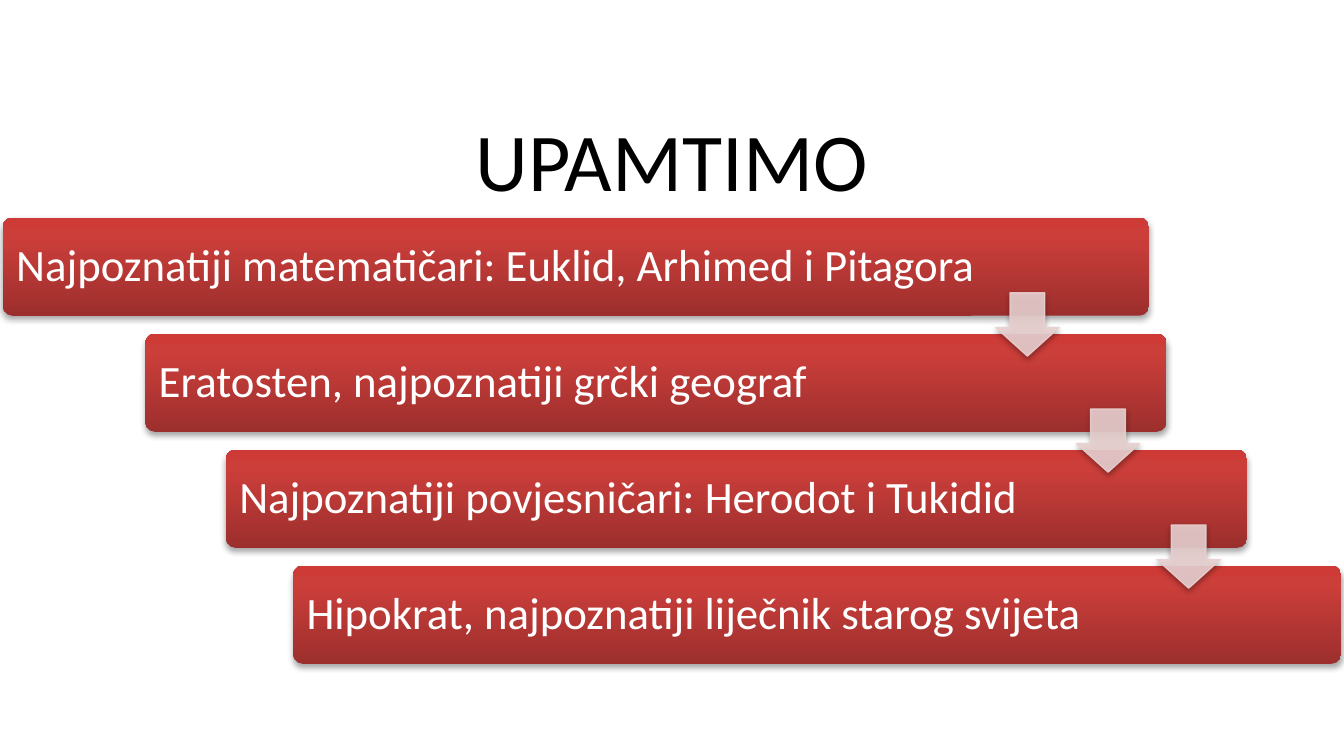
from lxml.etree import SubElement
from pptx import Presentation
from pptx.dml.color import RGBColor
from pptx.enum.shapes import MSO_SHAPE
from pptx.enum.text import MSO_ANCHOR, MSO_AUTO_SIZE, PP_ALIGN
from pptx.oxml import parse_xml
from pptx.oxml.ns import nsdecls, qn
from pptx.util import Inches, Pt

TITLE = "UPAMTIMO"
# text, left, width
STEPS = [
    ("Najpoznatiji matematičari: Euklid, Arhimed i Pitagora", 0.02, 8.53),
    ("Eratosten, najpoznatiji grčki geograf", 1.08, 7.6),
    ("Najpoznatiji povjesničari: Herodot i Tukidid", 1.68, 7.6),
    ("Hipokrat, najpoznatiji liječnik starog svijeta", 2.18, 7.8),
]
BLACK = RGBColor(0x00, 0x00, 0x00)
WHITE = RGBColor(0xFF, 0xFF, 0xFF)
PINK = RGBColor(0xE8, 0xD0, 0xD0)
RED_STOPS = [
    (0, RGBColor(0x9C, 0x2F, 0x2D)),
    (80, RGBColor(0xCB, 0x3E, 0x3A)),
    (100, RGBColor(0xCE, 0x3B, 0x37)),
]
FONT = "Calibri"
SLIDE_W = 10
SLIDE_H = SLIDE_W * 9 / 16
TOP, BAR_H = 1.62, 0.73
PITCH = (4.21 - TOP) / (len(STEPS) - 1)
ARROW_LEFT, ARROW_SHIFT, ARROW_DROP, ARROW_SIZE = 7.41, 0.6, 0.56, 0.47


def set_text(tf, text, size, color, align):
    tf.word_wrap = True
    tf.auto_size = MSO_AUTO_SIZE.NONE
    tf.vertical_anchor = MSO_ANCHOR.MIDDLE
    p = tf.paragraphs[0]
    p.text = text
    p.alignment = align
    p.line_spacing = 0.9
    p.font.name, p.font.size, p.font.color.rgb = FONT, Pt(size), color


def add_gradient(sp):
    """Fill the shape with the red stops, running from bottom to top."""
    stops = "".join(
        f'<a:gs pos="{pos * 1000}"><a:srgbClr val="{color}"/></a:gs>'
        for pos, color in RED_STOPS)
    sp._element.spPr.append(parse_xml(
        f'<a:gradFill {nsdecls("a")} rotWithShape="1"><a:gsLst>{stops}</a:gsLst>'
        '<a:lin ang="16200000" scaled="0"/></a:gradFill>'))


def add_shadow(sp):
    sp._element.spPr.append(parse_xml(
        f'<a:effectLst {nsdecls("a")}>'
        f'<a:outerShdw blurRad="{Pt(3.1)}" dist="{Pt(1.8)}" dir="5400000" rotWithShape="0">'
        '<a:srgbClr val="000000"><a:alpha val="35000"/></a:srgbClr>'
        '</a:outerShdw></a:effectLst>'))


def add_bar(shapes, i, text, left, width):
    sp = shapes.add_shape(MSO_SHAPE.ROUNDED_RECTANGLE, Inches(left),
                          Inches(TOP + i * PITCH), Inches(width), Inches(BAR_H))
    sp.adjustments[0] = 0.1
    add_gradient(sp)
    sp.line.fill.background()
    add_shadow(sp)
    tf = sp.text_frame
    tf.margin_left = tf.margin_right = Inches(0.08)
    tf.margin_top = tf.margin_bottom = Inches(0.1)
    set_text(tf, text, 24, WHITE, PP_ALIGN.LEFT)


def add_arrow(shapes, i):
    sp = shapes.add_shape(MSO_SHAPE.DOWN_ARROW, Inches(ARROW_LEFT + i * ARROW_SHIFT),
                          Inches(TOP + ARROW_DROP + i * PITCH),
                          Inches(ARROW_SIZE), Inches(ARROW_SIZE))
    sp.adjustments[0], sp.adjustments[1] = 0.55, 0.45
    sp.line.width = Pt(0.75)
    for fill in (sp.fill, sp.line.fill):
        fill.solid()
        fill.fore_color.rgb = PINK
    for color in sp._element.spPr.iter(qn("a:srgbClr")):
        SubElement(color, qn("a:alpha"), val="90000")
    add_shadow(sp)


prs = Presentation()
prs.slide_width, prs.slide_height = Inches(SLIDE_W), Inches(SLIDE_H)
s = prs.slides.add_slide(prs.slide_layouts[5])

title = s.shapes.title
title.left, title.top = Inches(0.5), Inches(0.84)
title.width, title.height = Inches(9), Inches(0.78)
set_text(title.text_frame, TITLE, 44, BLACK, PP_ALIGN.CENTER)

diagram = s.shapes.add_group_shape()
for i, step in enumerate(STEPS):
    add_bar(diagram.shapes, i, *step)
for i in range(len(STEPS) - 1):
    add_arrow(diagram.shapes, i)

prs.save("out.pptx")
